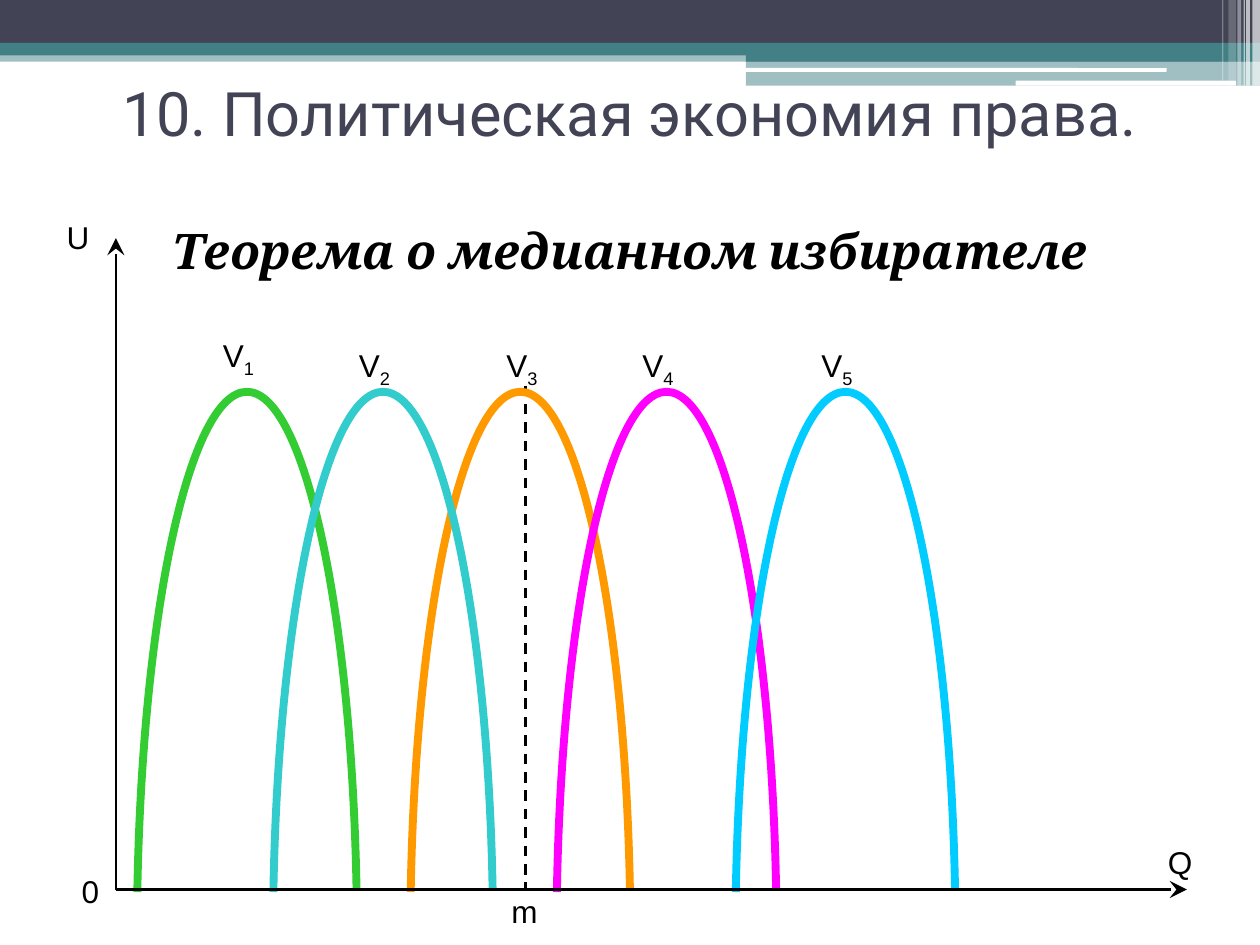
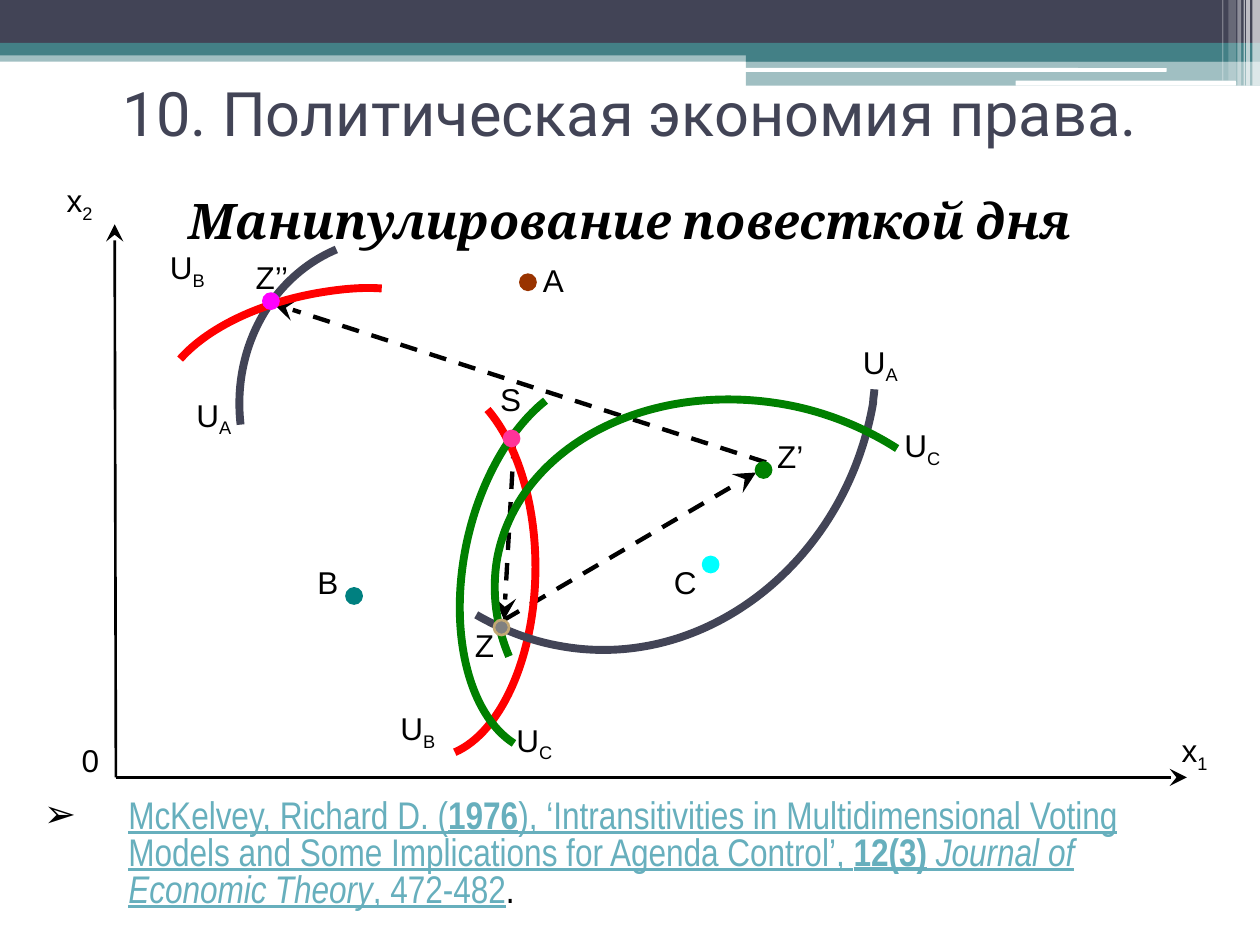
"""Builds two slides on the political economy of law: median voter and agenda manipulation."""
import pptx
import pptx.dml.color
import pptx.enum.dml
import pptx.enum.shapes
import pptx.enum.text
import pptx.oxml
import pptx.oxml.ns
import pptx.util

Inches = pptx.util.Inches
Pt = pptx.util.Pt
RGBColor = pptx.dml.color.RGBColor
Shape = pptx.enum.shapes.MSO_SHAPE
Align = pptx.enum.text.PP_ALIGN
Anchor = pptx.enum.text.MSO_ANCHOR
AutoSize = pptx.enum.text.MSO_AUTO_SIZE

BLACK = RGBColor(0x00, 0x00, 0x00)
WHITE = RGBColor(0xFF, 0xFF, 0xFF)
SLATE = RGBColor(0x42, 0x44, 0x56)
TEAL = RGBColor(0x43, 0x80, 0x86)
LINK = RGBColor(0x67, 0xAF, 0xBD)
RED = RGBColor(0xFF, 0x00, 0x00)
GREEN = RGBColor(0x00, 0x80, 0x00)
MAGENTA = RGBColor(0xFF, 0x00, 0xFF)
ORANGE = RGBColor(0xFF, 0x99, 0x00)
LIME = RGBColor(0x33, 0xCC, 0x33)
TURQUOISE = RGBColor(0x33, 0xCC, 0xCC)
SKY = RGBColor(0x00, 0xCC, 0xFF)
BROWN = RGBColor(0x99, 0x33, 0x00)
CYAN = RGBColor(0x00, 0xFF, 0xFF)
PINK = RGBColor(0xFF, 0x33, 0x99)
SEA = RGBColor(0x00, 0x80, 0x80)
GRAY = RGBColor(0x80, 0x80, 0x80)
SAND = RGBColor(0xC2, 0xA8, 0x74)

TITLE = "10. Политическая экономия права."

# left, top, width, height, colour, opacity in percent
BANDS = [
    (0, 0.4, 10, 0.09, TEAL, 50),
    (0, 0, 10, 0.34, SLATE, 100),
    (0, 0.34, 10, 0.1, TEAL, 100),
    (5.92, 0.39, 4.08, 0.1, TEAL, 100),
    (5.92, 0.48, 4.08, 0.2, TEAL, 50),
]
PILLS = [(5.91, 0.54, 3.35, 0.03, WHITE, 100), (8.06, 0.64, 1.75, 0.04, WHITE, 100)]
STRIPES = [
    (9.94, 0, 0.06, 0.68, WHITE, 65),
    (9.89, 0, 0.03, 0.68, WHITE, 65),
    (9.87, 0, 0.01, 0.68, WHITE, 60),
    (9.82, 0, 0.03, 0.68, WHITE, 40),
    (9.75, 0, 0.06, 0.64, WHITE, 20),
    (9.7, 0, 0.01, 0.64, WHITE, 30),
]

VOTER_PEAKS = [(1.96, LIME), (4.13, ORANGE), (5.29, MAGENTA), (3.04, TURQUOISE), (6.71, SKY)]
PREFERENCE_ARC = [(0.87, 7.07), (0.83, 4.82), (0.45, 3.11), (0, 3.11),
                  (-0.45, 3.11), (-0.83, 4.83), (-0.87, 7.08)]

# text, subscript, left, top
VOTER_LABELS = [
    ("0", "", 0.55, 6.87), ("m", "", 3.96, 7.03), ("Q", "", 9.17, 6.64), ("U", "", 0.43, 1.68),
    ("V", "1", 1.67, 2.62), ("V", "2", 2.75, 2.7), ("V", "3", 3.92, 2.7),
    ("V", "4", 5, 2.7), ("V", "5", 6.42, 2.7),
]
AGENDA_LABELS = [
    ("0", "", 0.55, 5.83), ("x", "1", 9.28, 5.75), ("x", "2", 0.43, 1.39),
    ("Z", "", 3.67, 4.92), ("Z’", "", 6.07, 3.42), ("Z’’", "", 1.93, 2),
    ("A", "", 4.21, 2.02), ("B", "", 2.42, 4.42), ("C", "", 5.25, 4.42), ("S", "", 3.87, 2.97),
    ("U", "A", 6.75, 2.67), ("U", "A", 1.46, 3.09), ("U", "B", 1.25, 1.92),
    ("U", "B", 3.08, 5.58), ("U", "С", 4, 5.67), ("U", "С", 7.08, 3.33),
]
LABEL_WIDTHS = {
    "0": 0.36, "m": 0.46, "U": 0.44, "x2": 0.48, "Z": 0.4, "Z’": 0.51, "Z’’": 0.62,
    "A": 0.44, "B": 0.42, "C": 0.42, "S": 0.38, "UA": 0.6, "UB": 0.59, "UС": 0.59,
}
USUAL_LABEL_WIDTH = 0.55

AGENDA_STEPS = [((4.08, 3.5), (4, 4.92)), ((4, 4.92), (6, 3.75)), ((6.08, 3.67), (2.17, 2.41))]
INDIFFERENCE_CURVES = [
    (RED, [(3.87, 3.25), (4.11, 3.53), (4.25, 4), (4.25, 4.5),
           (4.25, 5.2), (3.98, 5.81), (3.61, 5.97)]),
    (SLATE, [(3.78, 4.88), (3.99, 5), (4.22, 5.09), (4.46, 5.13), (5.6, 5.33),
             (6.71, 4.46), (6.93, 3.2), (6.93, 3.16), (6.94, 3.12), (6.94, 3.09)]),
    (GREEN, [(4.33, 3.18), (4.04, 3.41), (3.8, 3.84), (3.7, 4.33),
             (3.56, 5.02), (3.72, 5.67), (4.08, 5.9)]),
    (GREEN, [(7.12, 3.56), (6.87, 3.4), (6.58, 3.28), (6.28, 3.22), (5.17, 3),
             (4.13, 3.53), (3.95, 4.41), (3.9, 4.67), (3.93, 4.95), (4.04, 5.21)]),
    (SLATE, [(2.67, 1.98), (2.15, 2.2), (1.84, 2.77), (1.91, 3.37)]),
    (RED, [(1.43, 2.85), (1.67, 2.58), (2.12, 2.38), (2.62, 2.31),
           (2.76, 2.29), (2.9, 2.28), (3.03, 2.29)]),
]
# left, top, fill, outline
DOTS = [
    (4.13, 2.18, BROWN, BROWN), (5.58, 4.42, CYAN, CYAN), (4, 3.42, PINK, PINK),
    (3.92, 4.92, GRAY, SAND), (6, 3.67, GREEN, GREEN), (2.75, 4.67, SEA, SEA),
    (2.09, 2.33, MAGENTA, MAGENTA),
]
# text, bold, italic, linked
REFERENCE = [
    ("McKelvey, Richard D. (", False, False, True),
    ("1976", True, False, True),
    ("), ‘Intransitivities in Multidimensional Voting Models and Some Implications "
     "for Agenda Control’, ", False, False, True),
    ("12(3)", True, False, True),
    (" ", False, False, True),
    ("Journal of Economic Theory", False, True, True),
    (", 472-482", False, False, True),
    (".", False, False, False),
]


def style(span, size, font, color, bold=False, italic=False):
    span.font.size = Pt(size)
    span.font.name = font
    span.font.color.rgb = color
    span.font.bold = bold
    span.font.italic = italic


def add_child(parent, tag, **attributes):
    child = parent.makeelement(pptx.oxml.ns.qn(tag), attributes)
    parent.append(child)
    return child


def add_filled(page, kind, place, color, opacity=100):
    shape = page.shapes.add_shape(kind, *map(Inches, place))
    shape.shadow.inherit = False
    shape.fill.solid()
    shape.fill.fore_color.rgb = color
    if opacity < 100:
        tint = shape.fill._xPr.find(".//" + pptx.oxml.ns.qn("a:srgbClr"))
        add_child(tint, "a:alpha", val=str(opacity * 1000))
    shape.line.fill.background()
    return shape


def add_line(page, start, end, width=1.5, dashed=False, arrow=True):
    line = page.shapes.add_connector(
        pptx.enum.shapes.MSO_CONNECTOR.STRAIGHT, *map(Inches, (*start, *end)))
    line.line.color.rgb = BLACK
    line.line.width = Pt(width)
    if dashed:
        line.line.dash_style = pptx.enum.dml.MSO_LINE.DASH
    if arrow:
        add_child(line.line._get_or_add_ln(), "a:tailEnd", type="stealth", w="lg", len="lg")
    add_child(line._element.spPr, "a:effectLst")


def add_curve(page, knots, color):
    """Draw a chain of cubic segments: each takes two control knots and an end knot."""
    points = [(Inches(x), Inches(y)) for x, y in knots]
    builder = page.shapes.build_freeform(*points[0])
    builder.add_line_segments(points[1:], close=False)
    curve = builder.convert_to_shape()
    outline = curve._element.find(".//" + pptx.oxml.ns.qn("a:path"))
    straights = outline.findall(pptx.oxml.ns.qn("a:lnTo"))
    for first in range(0, len(straights), 3):
        bend = add_child(outline, "a:cubicBezTo")
        for straight in straights[first:first + 3]:
            bend.append(straight[0])
            outline.remove(straight)
    curve.shadow.inherit = False
    curve.fill.background()
    curve.line.color.rgb = color
    curve.line.width = Pt(4.5)


def add_labels(page, labels):
    for text, subscript, left, top in labels:
        width = LABEL_WIDTHS.get(text + subscript, USUAL_LABEL_WIDTH)
        box = page.shapes.add_textbox(*map(Inches, (left, top, width, 0.5)))
        box.text_frame.word_wrap = False
        box.text_frame.auto_size = AutoSize.SHAPE_TO_FIT_TEXT
        for part in filter(None, (text, subscript)):
            span = box.text_frame.paragraphs[0].add_run()
            span.text = part
            style(span, 18, "Arial", BLACK)
        if subscript:
            span._r.get_or_add_rPr().set("baseline", "-25000")


def add_page(deck, heading, top, height, spacing):
    """Add a slide with bands, title and heading; return it with its body text frame."""
    page = deck.slides.add_slide(deck.slide_layouts[5])
    for kind, group in ((Shape.RECTANGLE, BANDS), (Shape.ROUNDED_RECTANGLE, PILLS),
                        (Shape.RECTANGLE, STRIPES)):
        for *place, color, opacity in group:
            add_filled(page, kind, place, color, opacity)

    title = page.shapes.title
    title.left, title.top, title.width, title.height = map(Inches, (0, 0.47, 10, 0.84))
    frame = title.text_frame
    frame.text = TITLE
    frame.auto_size = AutoSize.NONE
    frame.vertical_anchor = Anchor.MIDDLE
    frame.paragraphs[0].alignment = Align.CENTER
    style(frame.paragraphs[0].runs[0], 35, "Roboto", SLATE)

    body = add_filled(page, Shape.RECTANGLE, (0.25, top, 9.5, height), WHITE).text_frame
    body.word_wrap = True
    body.vertical_anchor = Anchor.TOP
    body.text = heading
    para = body.paragraphs[0]
    para.alignment = Align.CENTER
    para.line_spacing = spacing
    para.space_before = Pt(3)
    style(para.runs[0], 28, "Cambria", BLACK, True, True)
    return page, body


def add_reference(body):
    para = body.add_paragraph()
    para.alignment = Align.LEFT
    para.line_spacing = 0.8
    para.space_before = Pt(315)
    settings = para._p.get_or_add_pPr()
    settings.set("marL", str(Inches(0.67)))
    settings.set("indent", str(-Inches(0.67)))
    add_child(add_child(settings, "a:buClr"), "a:srgbClr", val=str(BLACK))
    add_child(settings, "a:buFont", typeface="Arial")
    add_child(settings, "a:buChar", char="➢")
    for text, bold, italic, linked in REFERENCE:
        span = para.add_run()
        span.text = text
        style(span, 22, "Arial Narrow", LINK if linked else BLACK, bold, italic)
        span.font.underline = linked


def build_median_voter(deck):
    page, _ = add_page(deck, "Теорема о медианном избирателе", 1.7, 5.43, 1.0)
    add_line(page, (0.92, 7.06), (0.92, 1.89))
    add_line(page, (4.17, 3.06), (4.17, 7.06), dashed=True, arrow=False)
    for peak, color in VOTER_PEAKS:
        add_curve(page, [(peak + x, y) for x, y in PREFERENCE_ARC], color)
    add_line(page, (0.92, 7.06), (9.42, 7.06))
    add_labels(page, VOTER_LABELS)


def build_agenda(deck):
    page, body = add_page(deck, "Манипулирование повесткой дня", 1.55, 5.95, 0.8)
    add_reference(body)
    for start, end in AGENDA_STEPS:
        add_line(page, start, end, 2.5, dashed=True)
    add_line(page, (0.92, 6.17), (0.91, 1.78))
    add_line(page, (0.92, 6.17), (9.42, 6.17))
    for color, knots in INDIFFERENCE_CURVES:
        add_curve(page, knots, color)
    for left, top, fill, outline in DOTS:
        dot = add_filled(page, Shape.OVAL, (left, top, 0.12, 0.12), fill)
        dot.line.color.rgb = outline
        dot.line.width = Pt(1.5)
    add_labels(page, AGENDA_LABELS)


def main():
    deck = pptx.Presentation()
    deck.slide_width, deck.slide_height = Inches(10), Inches(7.5)
    build_median_voter(deck)
    build_agenda(deck)
    deck.save("out.pptx")


if __name__ == "__main__":
    main()
